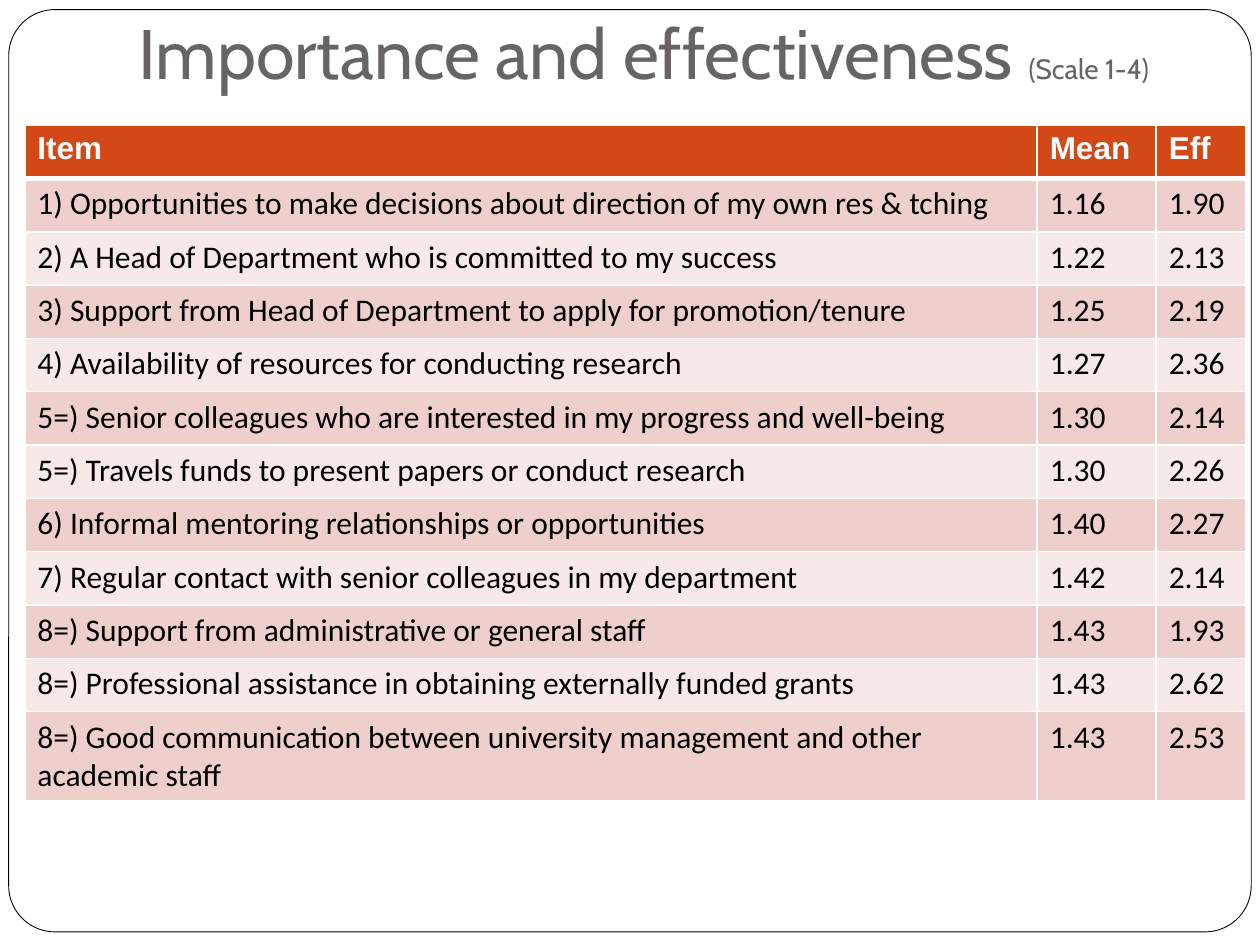
import pptx
import pptx.util
import pptx.dml.color
import pptx.enum.shapes
import pptx.enum.text
import pptx.oxml
import pptx.oxml.ns

Pt = pptx.util.Pt
Text = pptx.enum.text

ROWS = [
    ("Item", "Mean", "Eff"),
    ("1) Opportunities to make decisions about direction of my own res & tching", "1.16", "1.90"),
    ("2) A Head of Department who is committed to my success", "1.22", "2.13"),
    ("3) Support from Head of Department to apply for promotion/tenure", "1.25", "2.19"),
    ("4) Availability of resources for conducting research", "1.27", "2.36"),
    ("5=) Senior colleagues who are interested in my progress and well-being", "1.30", "2.14"),
    ("5=) Travels funds to present papers or conduct research", "1.30", "2.26"),
    ("6) Informal mentoring relationships or opportunities", "1.40", "2.27"),
    ("7) Regular contact with senior colleagues in my department", "1.42", "2.14"),
    ("8=) Support from administrative or general staff", "1.43", "1.93"),
    ("8=) Professional assistance in obtaining externally funded grants", "1.43", "2.62"),
    ("8=) Good communication between university management and other academic staff", "1.43", "2.53"),
]


def tint(code):
    return pptx.dml.color.RGBColor.from_string(code)


def apply(thing, values):
    for name, value in values.items():
        setattr(thing, name, value)


class Deck:
    head = {"name": "Arial", "size": Pt(18), "bold": True}
    body = {"name": "Calibri", "size": Pt(18), "bold": False}
    grey, white, black = "696464", "FFFFFF", "000000"
    rust, bands = "D34817", ("F7E9E8", "EFCFCC")

    def __init__(self, slide):
        self.slide = slide

    def label(self, para, text, font, color):
        run = para.add_run()
        run.text = text
        apply(run.font, font)
        run.font.color.rgb = tint(color)

    def frame(self, left, top, width, height):
        kind = pptx.enum.shapes.MSO_SHAPE.ROUNDED_RECTANGLE
        shape = self.slide.shapes.add_shape(kind, Pt(left), Pt(top), Pt(width), Pt(height))
        shape.adjustments[0] = 0.05
        shape.shadow.inherit = False
        shape.fill.solid()
        shape.fill.fore_color.rgb = tint(self.white)
        shape.line.color.rgb = tint(self.black)
        shape.line.width = Pt(0.5)
        tree = self.slide.shapes.element
        tree.remove(shape.element)
        tree.insert(2, shape.element)

    def title(self, left, top, width, height, parts):
        shape = self.slide.shapes.title
        apply(shape, {"left": Pt(left), "top": Pt(top), "width": Pt(width), "height": Pt(height)})
        apply(shape.text_frame, {
            "word_wrap": True, "auto_size": Text.MSO_AUTO_SIZE.NONE,
            "vertical_anchor": Text.MSO_ANCHOR.BOTTOM,
            "margin_left": Pt(7.2), "margin_right": Pt(7.2),
            "margin_top": Pt(3.6), "margin_bottom": Pt(7.2)})
        para = shape.text_frame.paragraphs[0]
        para.alignment = Text.PP_ALIGN.LEFT
        for text, size in parts:
            self.label(para, text, {"name": "Cabin", "size": Pt(size)}, self.grey)

    def edge(self, cell, side, width):
        space = pptx.oxml.ns.nsdecls("a")
        line = pptx.oxml.parse_xml(
            f'<a:{side} {space} w="{Pt(width)}"><a:solidFill>'
            f'<a:srgbClr val="{self.white}"/></a:solidFill></a:{side}>')
        cell._tc.get_or_add_tcPr().append(line)

    def cell(self, cell, text, row):
        font, color, fill = self.body, self.black, self.bands[row % 2]
        if row == 0:
            font, color, fill = self.head, self.white, self.rust
        self.label(cell.text_frame.paragraphs[0], text, font, color)
        for side in ("lnL", "lnR", "lnT", "lnB"):
            thick = (row, side) in ((0, "lnB"), (1, "lnT"))
            self.edge(cell, side, 3 if thick else 1)
        cell.fill.solid()
        cell.fill.fore_color.rgb = tint(fill)

    def table(self, left, top, widths, heights, rows):
        grid = self.slide.shapes.add_table(
            len(rows), len(widths), Pt(left), Pt(top), Pt(sum(widths)), Pt(sum(heights))).table
        for col, width in zip(grid.columns, widths):
            col.width = Pt(width)
        for row, height in zip(grid.rows, heights):
            row.height = Pt(height)
        for r, texts in enumerate(rows):
            for c, text in enumerate(texts):
                self.cell(grid.cell(r, c), text, r)


def main():
    show = pptx.Presentation()
    apply(show, {"slide_width": Pt(720), "slide_height": Pt(540)})
    deck = Deck(show.slides.add_slide(show.slide_layouts[5]))
    deck.frame(5, 5.5, 710, 527)
    deck.title(72, 21.6, 612, 39, [("Importance and effectiveness ", 40), ("(Scale 1-4)", 16)])
    deck.table(14.2, 71.5, [578.5, 68, 51], [30.5] * 11 + [51], ROWS)
    show.save("out.pptx")


if __name__ == "__main__":
    main()
